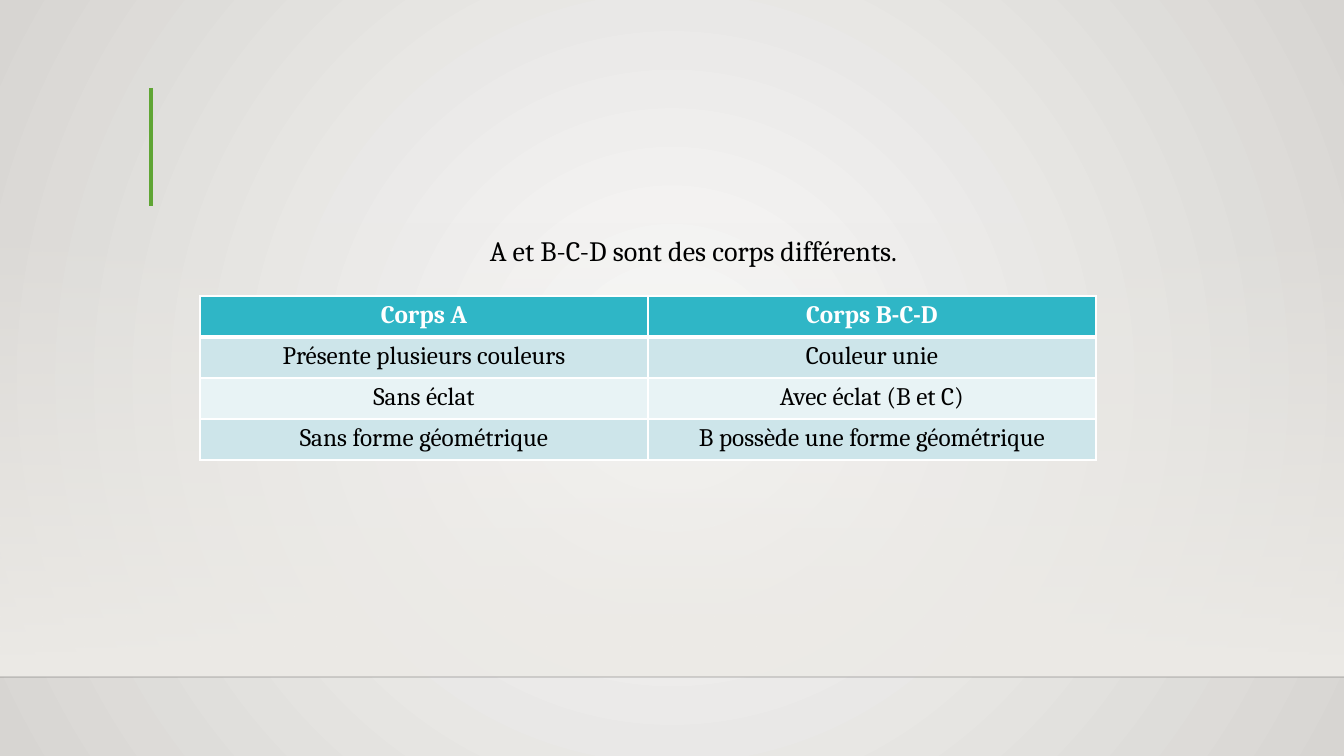
from dataclasses import dataclass

from pptx import Presentation, util as u
from pptx.dml.color import RGBColor
from pptx.enum import shapes, text
from pptx.oxml import parse_xml
from pptx.oxml.ns import nsdecls, qn


@dataclass(frozen=True)
class Theme:
    """Colours, font and type sizes of the slide."""
    font: str = "Cambria"
    body_size: int = 20
    table_size: int = 18
    ink: str = "000000"
    paper: str = "FFFFFF"
    centre: str = "FAFAF9"
    edge: str = "D7D5D2"
    wall: str = "EDEBE7"
    floor_line: str = "000001"
    accent: str = "5FA534"
    header: str = "2FB6C6"
    bands: tuple = ("CDE5EA", "E8F3F5")


THEME = Theme()
ROWS = [
    ("Corps A", "Corps B-C-D"),
    ("Présente plusieurs couleurs", "Couleur unie"),
    ("Sans éclat", "Avec éclat (B et C)"),
    ("Sans forme géométrique", "B possède une forme géométrique"),
]


def px(length):
    """Turn pixels into EMU."""
    return u.Emu(round(length * 914400 / 100.8))


def gradient(start, end, direction, start_alpha=100):
    """Return the XML of a two-stop gradient fill."""
    return (
        f'<a:gradFill {nsdecls("a")} rotWithShape="1"><a:gsLst>'
        f'<a:gs pos="0"><a:srgbClr val="{start}"><a:alpha val="{start_alpha * 1000}"/></a:srgbClr></a:gs>'
        f'<a:gs pos="100000"><a:srgbClr val="{end}"/></a:gs>'
        f'</a:gsLst>{direction}</a:gradFill>'
    )


def set_background(slide):
    """Give the slide a circular gradient from its centre."""
    circle = '<a:path path="circle"><a:fillToRect l="50000" t="50000" r="50000" b="50000"/></a:path>'
    fill = gradient(THEME.centre, THEME.edge, circle)
    background = parse_xml(
        f'<p:bg {nsdecls("p", "a")}><p:bgPr>{fill}<a:effectLst/></p:bgPr></p:bg>'
    )
    slide.element.find(qn("p:cSld")).insert(0, background)


def add_wall(slide, left, top, width, height):
    """Add a rectangle that fades in towards its foot."""
    wall = slide.shapes.add_shape(
        shapes.MSO_SHAPE.RECTANGLE, px(left), px(top), px(width), px(height))
    wall.shadow.inherit = False
    wall.line.fill.background()
    geometry = wall.element.spPr.find(qn("a:prstGeom"))
    geometry.addnext(parse_xml(
        gradient(THEME.wall, THEME.wall, '<a:lin ang="5400000" scaled="0"/>', 0)))


def add_line(slide, start, end, colour, points, opacity=100):
    """Add a straight line between two points."""
    line = slide.shapes.add_connector(
        shapes.MSO_CONNECTOR.STRAIGHT, *map(px, start + end))
    line.line.color.rgb = RGBColor.from_string(colour)
    line.line.width = u.Pt(points)
    line.element.spPr.append(parse_xml(f'<a:effectLst {nsdecls("a")}/>'))
    if opacity < 100:
        colour_element = next(line.element.spPr.iter(qn("a:srgbClr")))
        colour_element.append(parse_xml(
            f'<a:alpha {nsdecls("a")} val="{opacity * 1000}"/>'))


def write(text_frame, words, size, colour, bold=False):
    """Write one centred paragraph."""
    text_frame.text = words
    paragraph = text_frame.paragraphs[0]
    paragraph.alignment = text.PP_ALIGN.CENTER
    font = paragraph.runs[0].font
    font.name = THEME.font
    font.size = u.Pt(size)
    font.bold = bold
    font.color.rgb = RGBColor.from_string(colour)
    return paragraph


def add_statement(slide, words, left, top, width, height):
    """Add the sentence above the table."""
    box = slide.shapes.add_textbox(px(left), px(top), px(width), px(height))
    box.text_frame.word_wrap = True
    write(box.text_frame, words, THEME.body_size, THEME.ink).line_spacing = 1.2


def style_cell(cell, fill, bottom_points):
    """Fill a cell and draw its borders."""
    properties = cell._tc.get_or_add_tcPr()
    for side, points in (("L", 1), ("R", 1), ("T", 1), ("B", bottom_points)):
        properties.append(parse_xml(
            f'<a:ln{side} {nsdecls("a")} w="{u.Pt(points)}"><a:solidFill>'
            f'<a:srgbClr val="{THEME.paper}"/></a:solidFill></a:ln{side}>'))
    cell.fill.solid()
    cell.fill.fore_color.rgb = RGBColor.from_string(fill)


def add_comparison(slide, rows, left, top, column_width, row_height):
    """Add the table with a header and alternating bands."""
    table = slide.shapes.add_table(
        len(rows), len(rows[0]), px(left), px(top),
        px(column_width * len(rows[0])), px(row_height * len(rows))).table
    for row_index, row in enumerate(rows):
        table.rows[row_index].height = px(row_height)
        is_header = row_index == 0
        fill = THEME.header if is_header else THEME.bands[(row_index - 1) % 2]
        colour = THEME.paper if is_header else THEME.ink
        for column_index, words in enumerate(row):
            cell = table.cell(row_index, column_index)
            write(cell.text_frame, words, THEME.table_size, colour, is_header)
            style_cell(cell, fill, 3 if is_header else 1)


def main():
    """Build and save the slide."""
    presentation = Presentation()
    presentation.slide_width, presentation.slide_height = px(1344), px(756)
    slide = presentation.slides.add_slide(presentation.slide_layouts[6])
    set_background(slide)
    add_wall(slide, 0, 222, 1344, 455)
    add_line(slide, (0, 677), (1344, 677), THEME.floor_line, 1, 20)
    add_line(slide, (151, 88), (151, 206), THEME.accent, 3)
    add_statement(slide, "A et B-C-D sont des corps différents.", 169, 222, 1049, 380)
    add_comparison(slide, ROWS, 200, 296, 448, 41)
    presentation.save("out.pptx")


if __name__ == "__main__":
    main()
